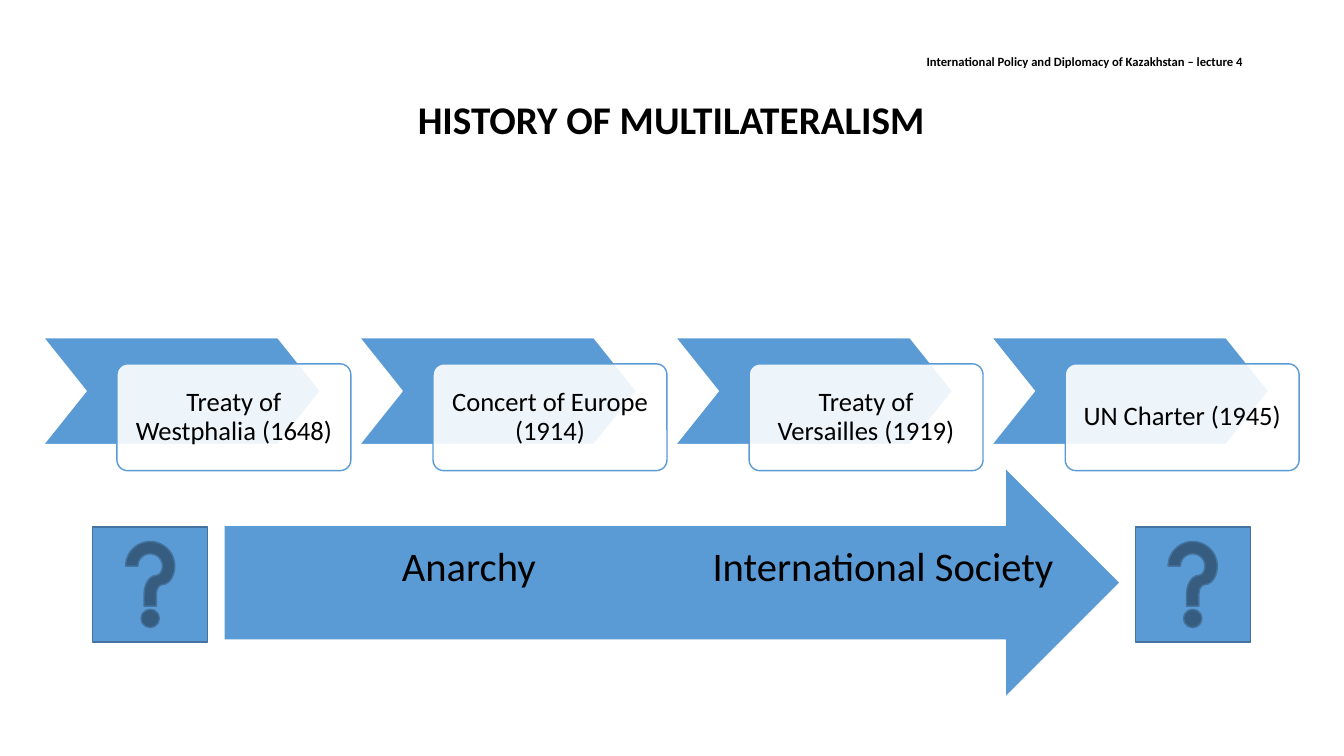
from lxml.etree import SubElement
from pptx import Presentation
from pptx.dml.color import RGBColor
from pptx.enum.shapes import MSO_SHAPE
from pptx.enum.text import MSO_ANCHOR, PP_ALIGN
from pptx.oxml.ns import qn
from pptx.util import Inches, Pt

COLORS = {"blue": "5B9BD5", "edge": "43739E", "white": "FFFFFF", "text": "000000"}
STEPS = [
    "Treaty of Westphalia (1648)",
    "Concert of Europe (1914)",
    "Treaty of Versailles (1919)",
    "UN Charter (1945)",
]
PITCH = 3.135


def color(name):
    return RGBColor.from_string(COLORS[name])


def write(shape, text, size, bold=False, align=PP_ALIGN.CENTER,
          anchor=MSO_ANCHOR.MIDDLE, inset=(0.1, 0.05)):
    """Fill a shape with one paragraph; inset is (sides, top and bottom)."""
    frame = shape.text_frame
    frame.word_wrap = True
    frame.vertical_anchor = anchor
    frame.margin_left = frame.margin_right = Inches(inset[0])
    frame.margin_top = frame.margin_bottom = Inches(inset[1])
    para = frame.paragraphs[0]
    para.text = text
    para.alignment = align
    para.line_spacing = 0.9
    font = para.font
    font.name = "Calibri"
    font.size = Pt(size)
    font.bold = bold
    font.color.rgb = color("text")


def add_text(slide, box, text, size, **style):
    write(slide.shapes.add_textbox(*map(Inches, box)), text, size, **style)


def add_block(slide, kind, box, fill="blue", line="white", adjust=None):
    shape = slide.shapes.add_shape(kind, *map(Inches, box))
    shape.shadow.inherit = False
    shape.fill.solid()
    shape.fill.fore_color.rgb = color(fill)
    shape.line.color.rgb = color(line)
    shape.line.width = Pt(1)
    if adjust is not None:
        shape.adjustments[0] = adjust
    return shape


def fade(shape, percent):
    """Set the opacity of a solid fill."""
    tint = shape.fill._xPr.find(qn("a:solidFill"))[0]
    SubElement(tint, qn("a:alpha")).set("val", str(percent * 1000))


def add_step(slide, left, label):
    add_block(slide, MSO_SHAPE.CHEVRON, (left, 3.35, 2.75, 1.06), adjust=0.4)
    card = add_block(slide, MSO_SHAPE.ROUNDED_RECTANGLE,
                     (left + 0.73, 3.61, 2.32, 1.06), "white", "blue", 0.1)
    fade(card, 90)
    write(card, label, 19, inset=(0.15, 0.15))


def main():
    deck = Presentation()
    deck.slide_width, deck.slide_height = Inches(13.33), Inches(7.5)
    slide = deck.slides.add_slide(deck.slide_layouts[6])

    add_text(slide, (0.92, 0.4, 11.5, 0.43),
             "International Policy and Diplomacy of Kazakhstan – lecture 4",
             9, bold=True, align=PP_ALIGN.RIGHT)
    add_text(slide, (0.42, 0.95, 12.47, 6.09), "HISTORY OF MULTILATERALISM",
             28, bold=True, anchor=MSO_ANCHOR.TOP)

    for index, label in enumerate(STEPS):
        add_step(slide, 0.43 + index * PITCH, label)

    add_block(slide, MSO_SHAPE.RIGHT_ARROW, (2.22, 4.64, 8.89, 2.28))
    for left, label in ((2.94, "Anarchy"), (7.05, "International Society")):
        add_text(slide, (left, 5.07, 3.42, 1.14), label, 29, inset=(0, 0.32))

    for left in (0.92, 11.26):
        add_block(slide, MSO_SHAPE.ACTION_BUTTON_HELP,
                  (left, 5.23, 1.14, 1.14), line="edge")

    deck.save("out.pptx")


if __name__ == "__main__":
    main()
